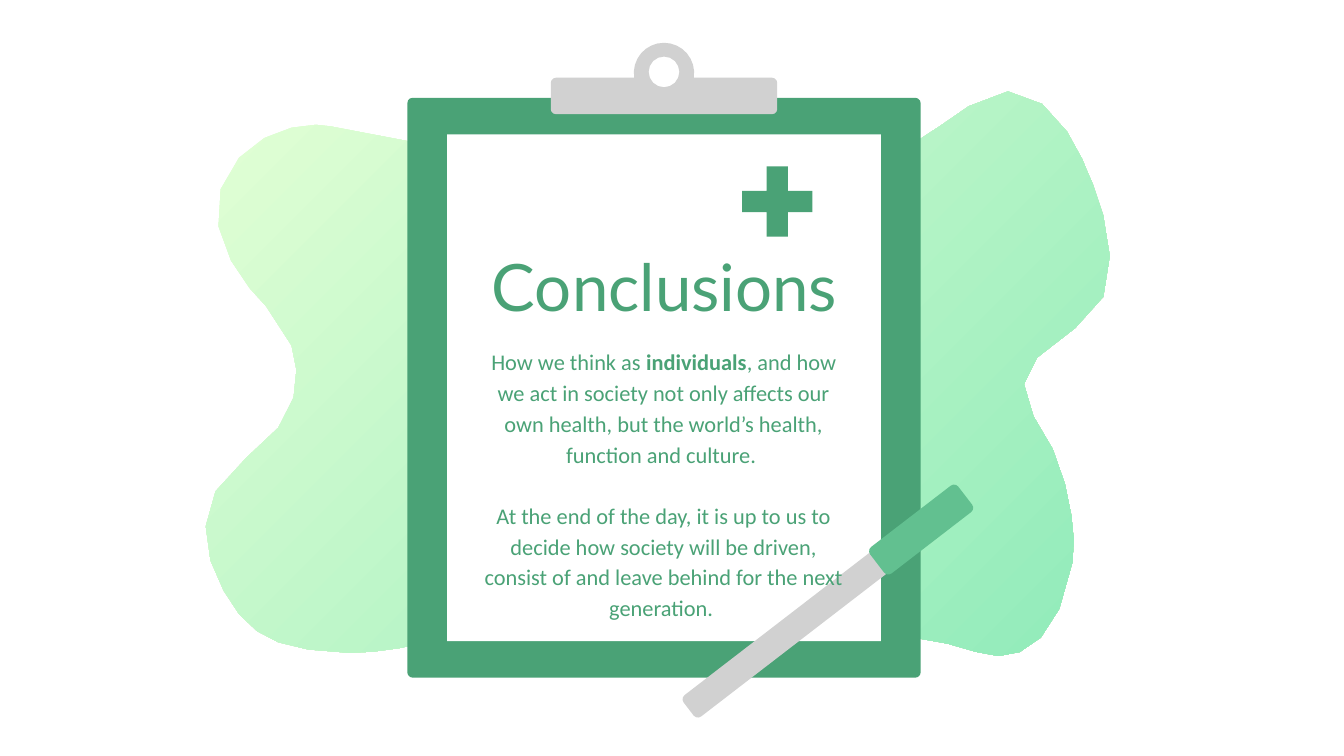
import math

import pptx
import pptx.dml.color
import pptx.enum.shapes
import pptx.enum.text
import pptx.util

Cm = pptx.util.Cm
SHAPES = pptx.enum.shapes.MSO_SHAPE
ANCHORS = pptx.enum.text.MSO_ANCHOR
GREEN, LIGHT_GREEN, GREY, WHITE = "4AA276", "62C090", "D1D1D1", "FFFFFF"
CORNER_RADIUS = 0.1
SEGMENT_LENGTH = 0.6

BLOB_START = (19.05, 1.73)
BLOB_CURVES = [
    ((18.82, 1.73), (18.57, 1.83), (18.31, 2.01)),
    ((17.96, 2.26), (17.58, 2.51), (17.22, 2.74)),
    ((17.09, 2.84), (16.94, 2.9), (16.81, 2.95)),
    ((16.81, 2.95), (15.9, 3.2), (15.9, 3.2)),
    ((15.72, 3.25), (15.54, 3.28), (15.37, 3.28)),
    ((14.94, 3.28), (14.5, 3.12), (14.15, 2.84)),
    ((13.44, 2.31), (12.47, 2.13), (11.48, 2.13)),
    ((9.7, 2.13), (7.98, 2.72), (7.98, 2.72)),
    ((7.98, 2.72), (6.6, 2.46), (6.25, 2.39)),
    ((6.17, 2.36), (6.1, 2.36), (5.97, 2.36)),
    ((5.44, 2.36), (4.5, 2.62), (4.17, 3.58)),
    ((3.86, 4.52), (4.72, 5.49), (5.03, 5.79)),
    ((5.23, 5.99), (5.41, 6.25), (5.51, 6.53)),
    ((5.69, 7.09), (5.72, 7.9), (4.65, 8.66)),
    ((3.3, 9.65), (4.06, 11), (4.52, 11.61)),
    ((4.72, 11.86), (4.98, 12.04), (5.26, 12.14)),
    ((5.56, 12.24), (6.02, 12.34), (6.6, 12.34)),
    ((7.16, 12.34), (7.87, 12.24), (8.69, 11.94)),
    ((9.37, 11.68), (10.41, 11.58), (11.58, 11.58)),
    ((13.69, 11.58), (16.15, 11.89), (17.37, 12.07)),
    ((17.73, 12.12), (18.08, 12.19), (18.44, 12.32)),
    ((18.57, 12.34), (18.72, 12.4), (18.87, 12.4)),
    ((19.38, 12.4), (20.02, 12.07), (20.27, 10.62)),
    ((20.29, 10.46), (20.32, 10.34), (20.29, 10.19)),
    ((20.27, 9.73), (20.12, 8.64), (19.53, 7.87)),
    ((19.38, 7.7), (19.33, 7.47), (19.35, 7.26)),
    ((19.41, 6.96), (19.63, 6.58), (20.32, 6.2)),
    ((21.64, 5.46), (20.55, 3.25), (20.55, 3.25)),
    ((20.55, 3.25), (20.02, 1.73), BLOB_START),
]


def color(value):
    """Return the RGB color for a hex string."""
    return pptx.dml.color.RGBColor.from_string(value)


def set_format(target, values):
    """Set every attribute in values on target."""
    for name, value in values.items():
        setattr(target, name, value)


def curve_points(start, curves):
    """Return evenly spaced points along a chain of cubic Bezier curves."""
    points = [start]
    for first, second, end in curves:
        steps = max(1, round(math.dist(start, end) / SEGMENT_LENGTH))
        for step in range(1, steps + 1):
            t = step / steps
            weights = ((1 - t) ** 3, 3 * t * (1 - t) ** 2, 3 * t ** 2 * (1 - t), t ** 3)
            controls = zip(start, first, second, end)
            points.append(tuple(sum(w * c for w, c in zip(weights, axis)) for axis in controls))
        start = end
    return points


def arc_points(center, radius, begin, end, steps):
    """Return points on an arc between two angles in degrees."""
    angles = [math.radians(begin + (end - begin) * step / steps) for step in range(steps + 1)]
    return [(center[0] + radius * math.cos(a), center[1] + radius * math.sin(a)) for a in angles]


def add_outline(slide, contours):
    """Add a freeform made of closed contours and return it."""
    contours = [[(Cm(x), Cm(y)) for x, y in contour] for contour in contours]
    builder = slide.shapes.build_freeform(*contours[0][0])
    for index, contour in enumerate(contours):
        if index:
            builder.move_to(*contour[0])
        builder.add_line_segments(contour[1:])
    shape = builder.convert_to_shape()
    shape.shadow.inherit = False
    shape.line.fill.background()
    return shape


def add_blob(slide):
    """Add the wavy background outline with its diagonal gradient."""
    shape = add_outline(slide, [curve_points(BLOB_START, BLOB_CURVES)])
    shape.fill.gradient()
    shape.fill.gradient_angle = 315
    for stop, value in zip(shape.fill.gradient_stops, ("E3FFD5", "90EBBA")):
        stop.color.rgb = color(value)


def add_clip(slide):
    """Add the clip: a rounded plate with a ring on top."""
    left, top, right, bottom = (edge + sign * CORNER_RADIUS for edge, sign in
                                ((10.41, 1), (1.47, 1), (14.69, -1), (2.16, -1)))
    outline = [
        *arc_points((left, top), CORNER_RADIUS, 180, 270, 3),
        *arc_points((12.55, 1.38), 0.57, 171, 369, 16),
        *arc_points((right, top), CORNER_RADIUS, 270, 360, 3),
        *arc_points((right, bottom), CORNER_RADIUS, 0, 90, 3),
        *arc_points((left, bottom), CORNER_RADIUS, 90, 180, 3),
    ]
    hole = arc_points((12.55, 1.36), 0.29, 360, 0, 16)
    shape = add_outline(slide, [outline, hole])
    shape.fill.solid()
    shape.fill.fore_color.rgb = color(GREY)


def add_shape(slide, kind, center, size, fill, adjustment=None, rotation=0):
    """Add a plain filled shape around its center."""
    left, top = (middle - length / 2 for middle, length in zip(center, size))
    shape = slide.shapes.add_shape(kind, Cm(left), Cm(top), *map(Cm, size))
    shape.shadow.inherit = False
    shape.rotation = rotation
    shape.fill.solid()
    shape.fill.fore_color.rgb = color(fill)
    shape.line.fill.background()
    if adjustment is not None:
        shape.adjustments[0] = adjustment


def add_rounded(slide, center, size, fill, rotation=0):
    """Add a rectangle with the common corner radius."""
    add_shape(slide, SHAPES.ROUNDED_RECTANGLE, center, size, fill,
              CORNER_RADIUS / min(size), rotation)


def add_text(slide, box, anchor, paragraphs, font, paragraph_format):
    """Add centered text whose paragraphs are lists of (text, bold) runs."""
    frame = slide.shapes.add_textbox(*map(Cm, box)).text_frame
    margins = dict.fromkeys(("margin_left", "margin_top", "margin_right", "margin_bottom"), Cm(0.25))
    set_format(frame, {"word_wrap": True, "vertical_anchor": anchor, **margins})
    for index, runs in enumerate(paragraphs):
        paragraph = frame.add_paragraph() if index else frame.paragraphs[0]
        set_format(paragraph, {"alignment": pptx.enum.text.PP_ALIGN.CENTER, **paragraph_format})
        if index:
            paragraph.space_before = pptx.util.Pt(16)
        for text, bold in runs:
            run = paragraph.add_run()
            run.text = text
            set_format(run.font, {"bold": bold, **font})
            run.font.color.rgb = color(GREEN)


def main():
    """Build and save the slide."""
    presentation = pptx.Presentation()
    set_format(presentation, {"slide_width": Cm(25.4), "slide_height": Cm(14.29)})
    slide = presentation.slides.add_slide(presentation.slide_layouts[6])
    board_center, pen_angle = (12.55, 7.33), -37.6

    add_blob(slide)
    add_rounded(slide, board_center, (9.7, 10.96), GREEN)
    add_shape(slide, SHAPES.RECTANGLE, board_center, (8.2, 9.58), WHITE)
    add_clip(slide)
    add_rounded(slide, (15.33, 11.62), (5.84, 0.51), GREY, pen_angle)
    add_rounded(slide, (17.41, 10.01), (2.1, 0.63), LIGHT_GREEN, pen_angle)
    add_shape(slide, SHAPES.CROSS, (14.69, 3.81), (1.33, 1.33), GREEN, 0.35)

    add_text(slide, (8.88, 4.13, 7.37, 2.26), ANCHORS.BOTTOM, [[("Conclusions", False)]],
             {"name": "Lato", "size": pptx.util.Pt(35)}, {})
    body = [
        [("How we think as ", False), ("individuals", True),
         (", and how we act in society not only affects our own health, "
          "but the world’s health, function and culture. ", False)],
        [("At the end of the day, it is up to us to decide how society will be driven, "
          "consist of and leave behind for the next generation. ", False)],
    ]
    add_text(slide, (8.86, 6.26, 7.37, 5.77), ANCHORS.TOP, body,
             {"name": "Calibri", "size": pptx.util.Pt(12)}, {"line_spacing": 1.15})
    presentation.save("out.pptx")


if __name__ == "__main__":
    main()
